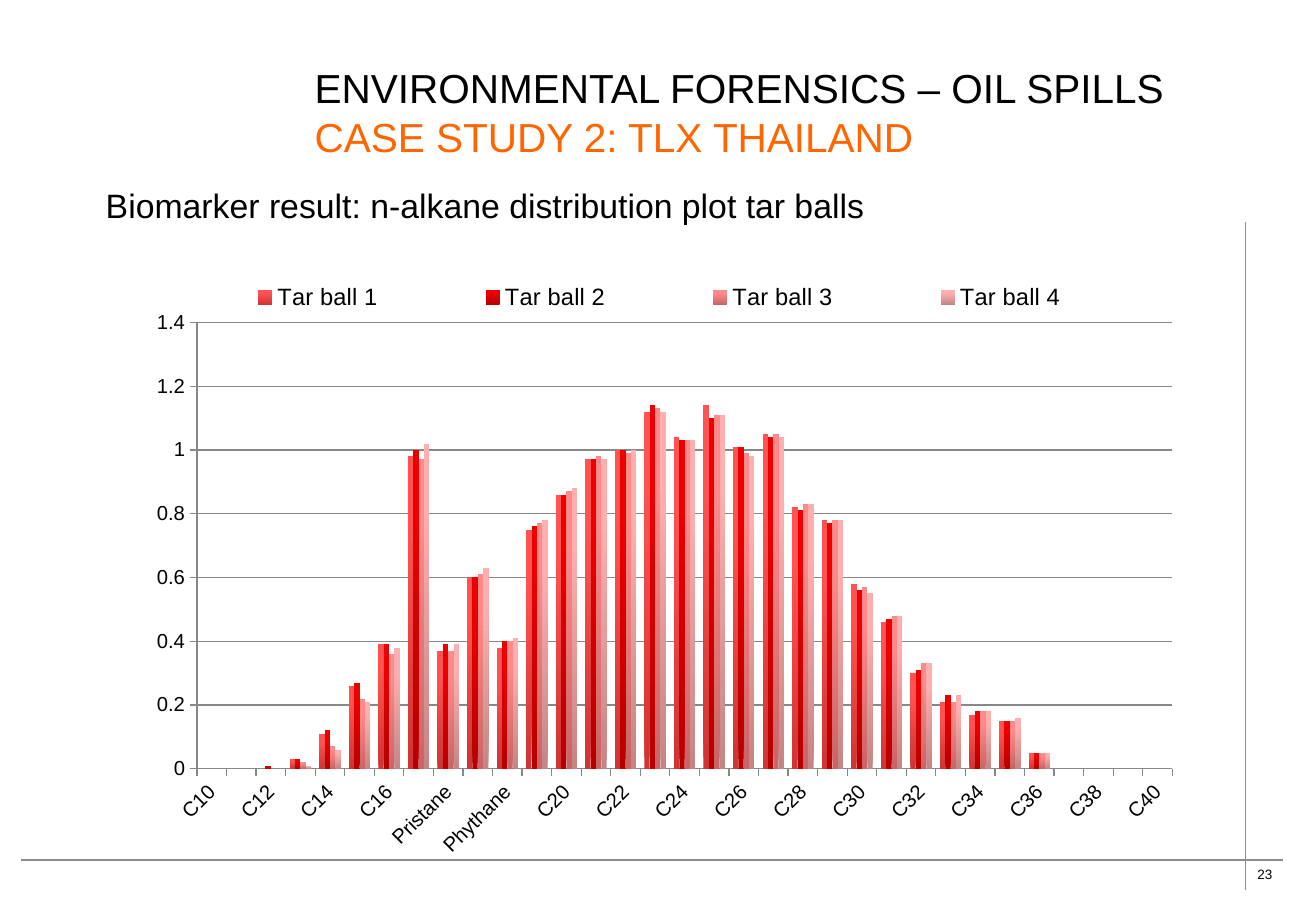
from lxml import etree
from pptx import Presentation
from pptx.chart.data import CategoryChartData
from pptx.dml.color import RGBColor
from pptx.enum.chart import XL_CHART_TYPE, XL_LEGEND_POSITION, XL_TICK_MARK
from pptx.enum.shapes import MSO_CONNECTOR
from pptx.enum.text import MSO_ANCHOR, MSO_AUTO_SIZE, PP_ALIGN
from pptx.oxml import parse_xml
from pptx.oxml.ns import nsdecls, qn
from pptx.util import Inches, Pt

CLUSTERED = XL_CHART_TYPE.COLUMN_CLUSTERED
LEGEND_TOP = XL_LEGEND_POSITION.TOP
TICK_OUT, TICK_NONE = XL_TICK_MARK.OUTSIDE, XL_TICK_MARK.NONE
STRAIGHT = MSO_CONNECTOR.STRAIGHT
TOP, MIDDLE = MSO_ANCHOR.TOP, MSO_ANCHOR.MIDDLE
NO_AUTOFIT = MSO_AUTO_SIZE.NONE
LEFT = PP_ALIGN.LEFT

FONT = "Arial"
COLORS = {"text": "000000", "accent": "FF6600", "rule": "8B8B8B", "axis": "888888"}

CARBONS = (["C10", "C11", "C12", "C13", "C14", "C15", "C16", "C17", "Pristane",
            "C18", "Phythane"] + [f"C{n}" for n in range(19, 41)])
# Name, concentration ratios, gradient from the foot to the top of the column
TAR_BALLS = [
    ("Tar ball 1",
     [0, 0, 0, 0.03, 0.11, 0.26, 0.39, 0.98, 0.37, 0.6, 0.38, 0.75, 0.86, 0.97, 1,
      1.12, 1.04, 1.14, 1.01, 1.05, 0.82, 0.78, 0.58, 0.46, 0.3, 0.21, 0.17, 0.15,
      0.05, 0, 0, 0, 0],
     ["D03434", "FF5353", "FF5454"]),
    ("Tar ball 2",
     [0, 0, 0.01, 0.03, 0.12, 0.27, 0.39, 1, 0.39, 0.6, 0.4, 0.76, 0.86, 0.97, 1,
      1.14, 1.03, 1.1, 1.01, 1.04, 0.81, 0.77, 0.56, 0.47, 0.31, 0.23, 0.18, 0.15,
      0.05, 0, 0, 0, 0],
     ["B60000", "EC0000", "ED0000"]),
    ("Tar ball 3",
     [0, 0, 0, 0.02, 0.07, 0.22, 0.36, 0.97, 0.37, 0.61, 0.4, 0.77, 0.87, 0.98, 0.99,
      1.13, 1.03, 1.11, 0.99, 1.05, 0.83, 0.78, 0.57, 0.48, 0.33, 0.21, 0.18, 0.15,
      0.05, 0, 0, 0],
     ["CA6565", "FF8A8A", "FF8C8C"]),
    ("Tar ball 4",
     [0, 0, 0, 0.01, 0.06, 0.21, 0.38, 1.02, 0.39, 0.63, 0.41, 0.78, 0.88, 0.97, 1,
      1.12, 1.03, 1.11, 0.98, 1.04, 0.83, 0.78, 0.55, 0.48, 0.33, 0.23, 0.18, 0.16,
      0.05, 0, 0, 0, 0],
     ["C68585", "FFAFAF", "FFB1B1"]),
]


def style_font(font, size, color="text"):
    font.name = FONT
    font.size = Pt(size)
    font.color.rgb = RGBColor.from_string(COLORS[color])


def manual_layout(x, y, w, h, inner=False):
    """Return a c:layout element placed by fractions of the chart area."""
    target = '<c:layoutTarget val="inner"/>' if inner else ""
    return parse_xml(
        f'<c:layout {nsdecls("c")}><c:manualLayout>{target}'
        '<c:xMode val="edge"/><c:yMode val="edge"/>'
        f'<c:x val="{x}"/><c:y val="{y}"/><c:w val="{w}"/><c:h val="{h}"/>'
        "</c:manualLayout></c:layout>")


prs = Presentation()
prs.slide_width, prs.slide_height = Inches(10.83), Inches(7.5)
slide = prs.slides.add_slide(prs.slide_layouts[1])

# Page frame and number
for x1, y1, x2, y2 in [(0.17, 7.08, 10.56, 7.08), (10.25, 7.33, 10.25, 1.83)]:
    rule = slide.shapes.add_connector(
        STRAIGHT, Inches(x1), Inches(y1), Inches(x2), Inches(y2))
    rule.line.color.rgb = RGBColor.from_string(COLORS["rule"])
    rule.line.width = Pt(1)
    etree.SubElement(rule._element.spPr, qn("a:effectLst"))

page_number = slide.shapes.add_textbox(
    Inches(10.25), Inches(7.08), Inches(0.34), Inches(0.23))
page_number.text_frame.word_wrap = False
number_run = page_number.text_frame.paragraphs[0].add_run()
number_run.text = "23"
style_font(number_run.font, 8)

# Title and subject line
title, subject = slide.shapes.title, slide.placeholders[1]
for holder, box, anchor in [(title, (2.49, 0.42, 7.57, 1), MIDDLE),
                            (subject, (0.77, 1.47, 9.17, 5.43), TOP)]:
    holder.left, holder.top, holder.width, holder.height = map(Inches, box)
    holder.text_frame.auto_size = NO_AUTOFIT
    holder.text_frame.vertical_anchor = anchor

title.text_frame.add_paragraph()
heading = [("ENVIRONMENTAL FORENSICS – OIL SPILLS", "text"),
           ("CASE STUDY 2: TLX THAILAND", "accent")]
for paragraph, (wording, color) in zip(title.text_frame.paragraphs, heading):
    paragraph.alignment = LEFT
    run = paragraph.add_run()
    run.text = wording
    style_font(run.font, 24, color)

result = subject.text_frame.paragraphs[0]
result_props = result._p.get_or_add_pPr()
result_props.set("marL", str(Inches(0.38)))
result_props.set("indent", str(Inches(-0.38)))
etree.SubElement(result_props, qn("a:buNone"))
result.space_before = Pt(0)
result_run = result.add_run()
result_run.text = "Biomarker result: n-alkane distribution plot tar balls"
style_font(result_run.font, 20)

# Distribution chart
distribution = CategoryChartData(number_format="General")
distribution.categories = CARBONS
for name, ratios, _ in TAR_BALLS:
    distribution.add_series(name, ratios)
chart = slide.shapes.add_chart(
    CLUSTERED, Inches(0.9), Inches(2.18), Inches(8.9), Inches(5), distribution).chart
style_font(chart.font, 18)
chart.has_title = False

plot = chart.plots[0]
plot.gap_width = 150
plot.overlap = 0
plot.vary_by_categories = False
for series, (_, _, shades) in zip(plot.series, TAR_BALLS):
    series.format.fill.solid()
    solid = series._element.spPr.find(qn("a:solidFill"))
    stops = "".join(f'<a:gs pos="{pos}"><a:srgbClr val="{shade}"/></a:gs>'
                    for pos, shade in zip((0, 80000, 100000), shades))
    gradient = parse_xml(
        f'<a:gradFill {nsdecls("a")} rotWithShape="1"><a:gsLst>{stops}</a:gsLst>'
        '<a:lin ang="16200000" scaled="0"/></a:gradFill>')
    solid.getparent().replace(solid, gradient)

carbon_axis, ratio_axis = chart.category_axis, chart.value_axis
ratio_axis.minimum_scale, ratio_axis.maximum_scale = 0, 1.4
ratio_axis.major_unit = 0.2
ratio_axis.has_major_gridlines = True
for axis in (carbon_axis, ratio_axis):
    axis.major_tick_mark = TICK_OUT
    axis.minor_tick_mark = TICK_NONE
    style_font(axis.tick_labels.font, 12)
for line in (carbon_axis.format.line, ratio_axis.format.line,
             ratio_axis.major_gridlines.format.line):
    line.color.rgb = RGBColor.from_string(COLORS["axis"])
    line.width = Pt(0.75)

carbon_xml = carbon_axis._element
carbon_xml.find(qn("c:txPr")).find(qn("a:bodyPr")).set("rot", "-2700000")
label_skip = parse_xml(f'<c:tickLblSkip {nsdecls("c")} val="2"/>')
carbon_xml.find(qn("c:noMultiLvlLbl")).addprevious(label_skip)

chart.has_legend = True
legend = chart.legend
legend.position = LEGEND_TOP
legend.include_in_layout = False
style_font(legend.font, 14)

plot_area = chart._chartSpace.chart.plotArea
for parent, layout in [
        (plot_area, manual_layout(0.081, 0.095, 0.902, 0.735, inner=True)),
        (legend._element, manual_layout(0.045, 0.024, 0.927, 0.06))]:
    for old_layout in parent.findall(qn("c:layout")):
        parent.remove(old_layout)
    if parent is plot_area:
        parent.insert(0, layout)
    else:
        parent.find(qn("c:legendPos")).addnext(layout)

prs.save("out.pptx")
